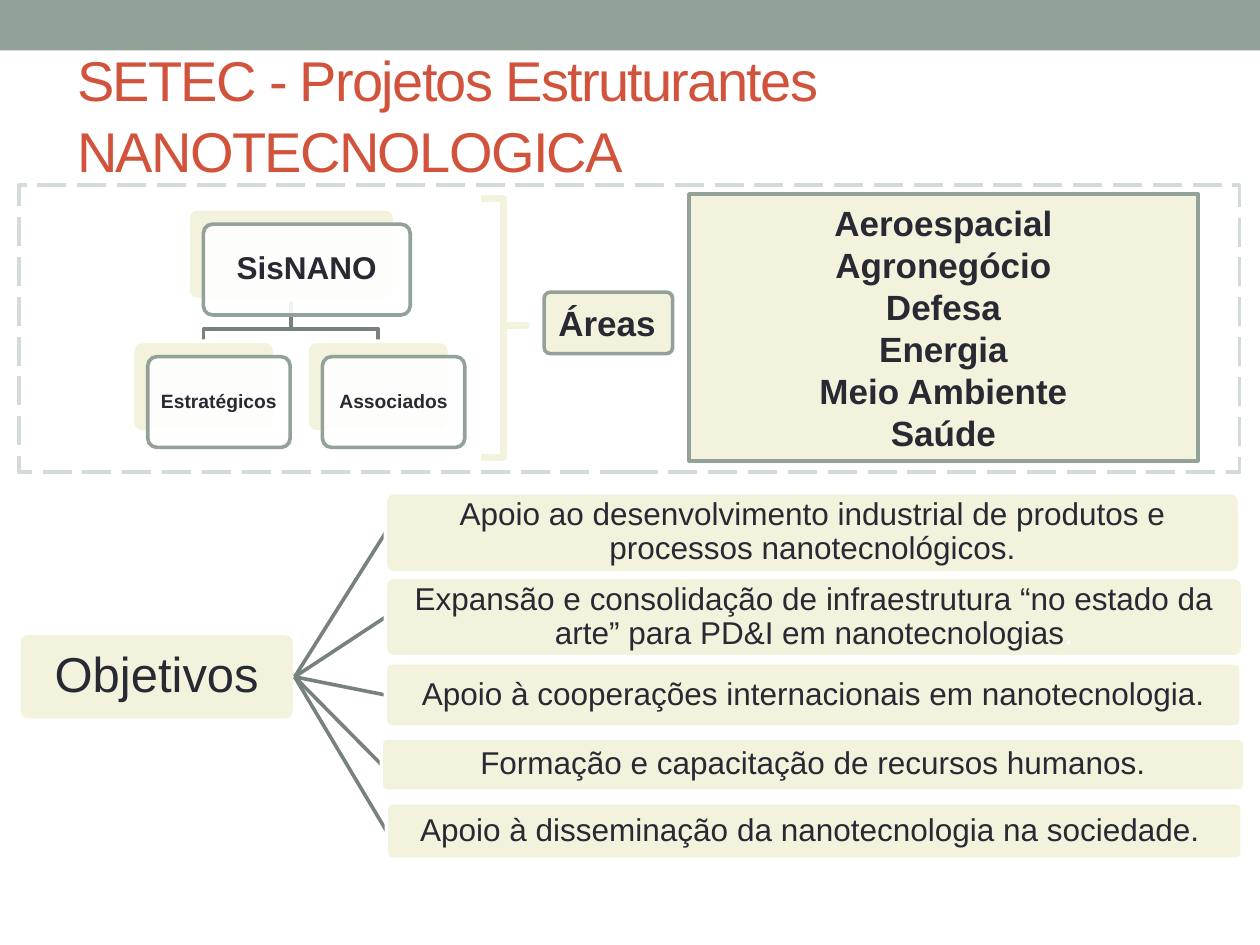
from lxml import etree
from pptx import Presentation
from pptx.dml.color import RGBColor
from pptx.enum.dml import MSO_LINE
from pptx.enum.shapes import MSO_CONNECTOR, MSO_SHAPE
from pptx.enum.text import MSO_ANCHOR, PP_ALIGN
from pptx.oxml.ns import qn
from pptx.util import Cm, Pt

RECTANGLE = MSO_SHAPE.RECTANGLE
ROUNDED = MSO_SHAPE.ROUNDED_RECTANGLE
RIGHT_BRACE = MSO_SHAPE.RIGHT_BRACE
STRAIGHT = MSO_CONNECTOR.STRAIGHT
LONG_DASH = MSO_LINE.LONG_DASH
MIDDLE = MSO_ANCHOR.MIDDLE
CENTER, LEFT = PP_ALIGN.CENTER, PP_ALIGN.LEFT

SAGE, DARK_SAGE, PALE_SAGE = "93A299", "76827B", "D4DAD6"
CREAM, WHITE, INK, RED = "F3F2DC", "FFFFFF", "292934", "D2533C"
FONT = "Arial"
LINE_WIDTH = 2.08

AREAS = ["Aeroespacial", "Agronegócio", "Defesa", "Energia", "Meio Ambiente", "Saúde"]
OBJECTIVES = [
    ("Apoio ao desenvolvimento industrial de produtos e processos nanotecnológicos.",
     7.39, 0, 17.22, 1.62),
    ("Expansão e consolidação de infraestrutura “no estado da arte” para PD&I em nanotecnologias",
     7.39, 1.71, 17.28, 1.6),
    ("Apoio à cooperações internacionais em nanotecnologia.", 7.39, 3.43, 17.25, 1.3),
    ("Formação e capacitação de recursos humanos.", 7.31, 4.95, 17.4, 1.07),
    ("Apoio à disseminação da nanotecnologia na sociedade. ", 7.41, 6.25, 17.25, 1.14),
]


def color(value):
    """Return the colour of a hex string."""
    return RGBColor.from_string(value)


def set_line(shape, line, width=LINE_WIDTH):
    """Give a shape or connector a solid line."""
    shape.line.color.rgb = color(line)
    shape.line.width = Pt(width)


def add_box(slide, kind, box, fill=None, line=None, width=LINE_WIDTH):
    """Add a preset shape in a box given in centimetres."""
    shape = slide.shapes.add_shape(kind, *map(Cm, box))
    shape.shadow.inherit = False
    if kind == ROUNDED:
        shape.adjustments[0] = 0.1
    if fill:
        shape.fill.solid()
        shape.fill.fore_color.rgb = color(fill)
    else:
        shape.fill.background()
    if line:
        set_line(shape, line, width)
    else:
        shape.line.fill.background()
    return shape


def write(shape, lines, size, bold=False, align=CENTER, spacing=1.0, inset=0.25):
    """Write one paragraph per line into a shape."""
    frame = shape.text_frame
    frame.word_wrap = True
    frame.vertical_anchor = MIDDLE
    frame.margin_left = frame.margin_right = Cm(inset)
    frame.margin_top = frame.margin_bottom = Cm(min(inset, 0.13))
    frame.text = "\n".join(lines)
    for paragraph in frame.paragraphs:
        paragraph.alignment = align
        paragraph.line_spacing = spacing
        paragraph.font.name = FONT
        paragraph.font.size = Pt(size)
        paragraph.font.bold = bold
        paragraph.font.color.rgb = color(INK)


def add_header(slide, left, top, width, height):
    """Add the top band and the title."""
    add_box(slide, RECTANGLE, (left, top, width, height), SAGE)
    title = slide.shapes.title
    title.left, title.top = Cm(left + 1.3), Cm(top + 0.91)
    title.width, title.height = Cm(22.86), Cm(2.74)
    frame = title.text_frame
    frame.text = "SETEC - Projetos Estruturantes\vNANOTECNOLOGICA"
    frame.vertical_anchor = MIDDLE
    frame.word_wrap = True
    paragraph = frame.paragraphs[0]
    paragraph.alignment = LEFT
    paragraph.line_spacing = 1.05
    paragraph.font.name = FONT
    paragraph.font.size = Pt(32)
    paragraph.font.color.rgb = color(RED)
    for run in paragraph.runs:
        run.font._element.set("spc", "-100")


def add_card(slide, left, top, width, text, size):
    """Add a translucent card over its cream backing."""
    height, offset = 1.83, 0.31
    add_box(slide, ROUNDED, (left, top, width, height), CREAM, WHITE)
    card = add_box(slide, ROUNDED, (left + offset, top + offset, width, height), WHITE, SAGE)
    solid = card.fill._xPr.find(qn("a:solidFill"))
    etree.SubElement(solid[0], qn("a:alpha")).set("val", "90000")
    write(card, [text], size, bold=True, spacing=0.9, inset=0.18)


def add_hierarchy(slide, left, top):
    """Add the SisNANO tree with its two branches."""
    child_top, child_width = top + 2.67, 2.87
    trunk, fork = left + 3.2, top + 2.42
    children = [("Estratégicos ", left), ("Associados", left + 3.52)]
    for _, child_left in children:
        end = child_left + child_width / 2
        builder = slide.shapes.build_freeform(Cm(trunk), Cm(top + 1.83))
        points = [(trunk, fork), (end, fork), (end, child_top)]
        builder.add_line_segments([(Cm(x), Cm(y)) for x, y in points], close=False)
        branch = builder.convert_to_shape()
        branch.shadow.inherit = False
        branch.fill.background()
        set_line(branch, DARK_SAGE)
    add_card(slide, left + 1.12, top, 4.17, "SisNANO", 18)
    for text, child_left in children:
        add_card(slide, child_left, child_top, child_width, text, 11)


def add_structure(slide, left, top, width, height):
    """Add the dashed frame with the tree, the brace and the areas."""
    frame = add_box(slide, RECTANGLE, (left, top, width, height), line=PALE_SAGE)
    frame.line.dash_style = LONG_DASH
    add_hierarchy(slide, left + 2.29, top + 0.48)
    areas = add_box(slide, RECTANGLE, (left + 13.51, top + 0.18, 10.26, 5.38), CREAM, SAGE, 2)
    write(areas, AREAS, 20, bold=True)
    brace = add_box(slide, RIGHT_BRACE, (left + 9.32, top + 0.28, 0.91, 5.21), line=CREAM, width=4)
    brace.adjustments[0], brace.adjustments[1] = 0, 0.49
    label = add_box(slide, ROUNDED, (left + 10.59, top + 2.16, 2.59, 1.24), CREAM, SAGE)
    write(label, ["Áreas"], 20, bold=True, align=LEFT)


def add_objectives(slide, left, top):
    """Add the goals, each joined to the root by a line."""
    root_top, root_width, root_height = top + 2.84, 5.56, 1.75
    root = add_box(slide, ROUNDED, (left, root_top, root_width, root_height), CREAM, WHITE)
    write(root, ["Objetivos"], 28, spacing=0.9, inset=0.1)
    for index, (text, row_left, row_top, width, height) in enumerate(OBJECTIVES):
        x, y = left + row_left, top + row_top
        line = slide.shapes.add_connector(
            STRAIGHT, Cm(left + root_width), Cm(root_top + root_height / 2),
            Cm(x), Cm(y + height / 2))
        set_line(line, DARK_SAGE)
        etree.SubElement(line._element.spPr, qn("a:effectLst"))
        goal = add_box(slide, ROUNDED, (x, y, width, height), CREAM, WHITE)
        write(goal, [text], 18, spacing=0.9, inset=0.08)
        if index == 1:
            period = goal.text_frame.paragraphs[0].add_run()
            period.text = "."
            period.font.color.rgb = color(WHITE)


def main():
    """Build and save the slide."""
    presentation = Presentation()
    presentation.slide_width, presentation.slide_height = Cm(25.4), Cm(19.05)
    slide = presentation.slides.add_slide(presentation.slide_layouts[5])
    add_header(slide, 0, 0, 25.4, 1.02)
    add_structure(slide, 0.38, 3.73, 24.61, 5.79)
    add_objectives(slide, 0.38, 9.93)
    presentation.save("out.pptx")


if __name__ == "__main__":
    main()
